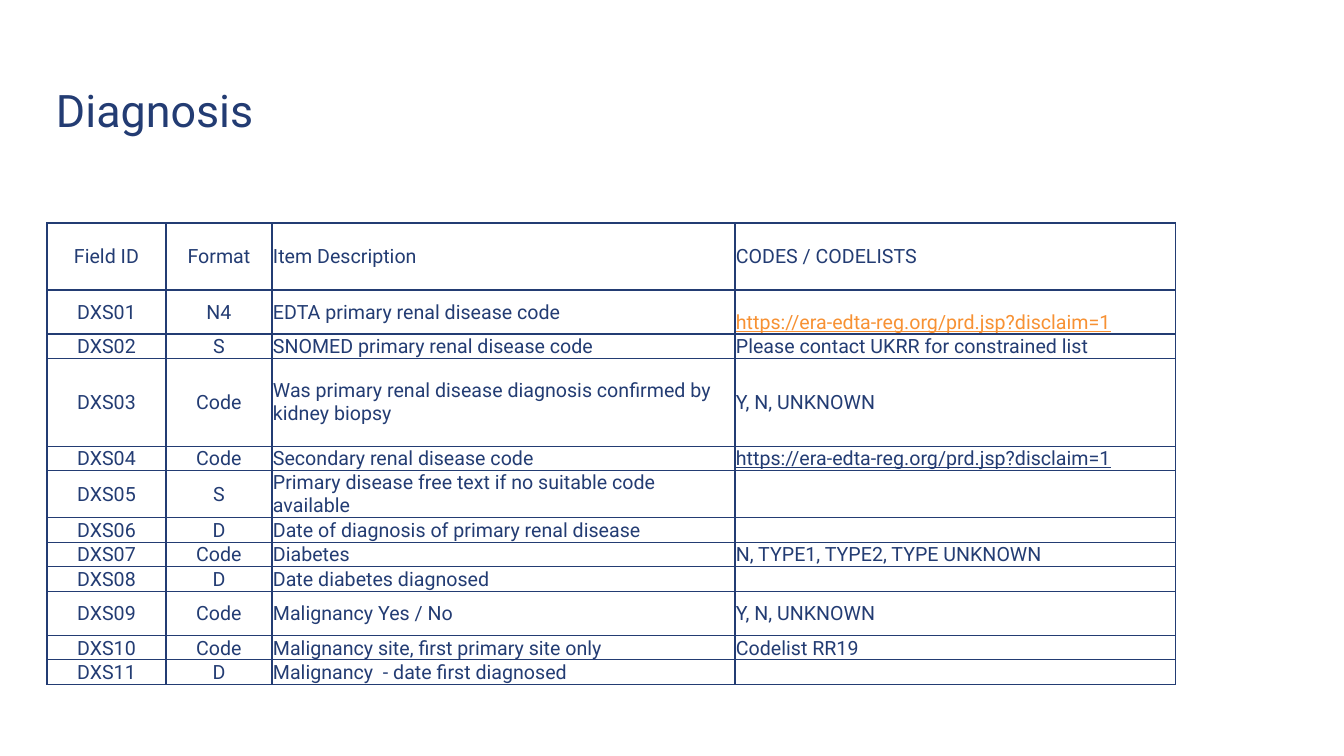
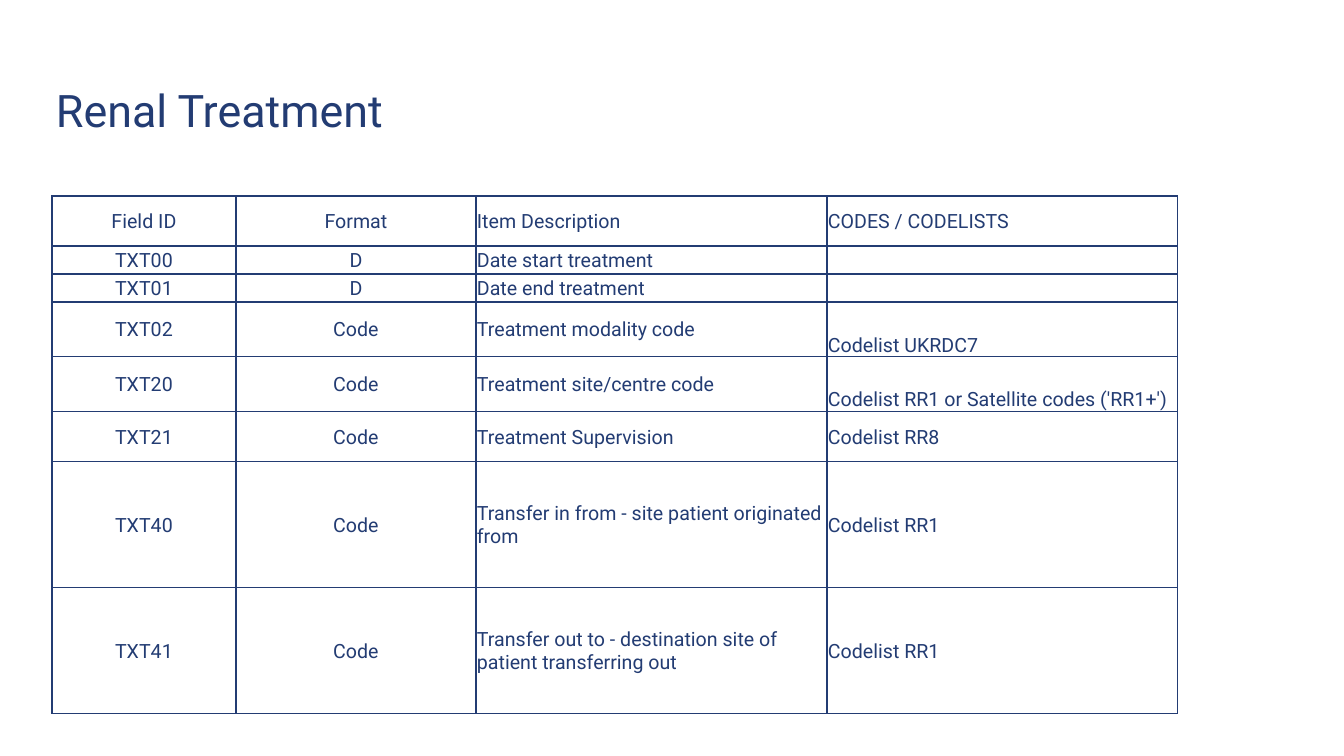
from dataclasses import dataclass

from lxml import etree
from pptx import Presentation
from pptx.dml.color import RGBColor
from pptx.enum.text import MSO_ANCHOR, PP_ALIGN
from pptx.oxml.ns import qn
from pptx.util import Emu, Pt

MIDDLE, BOTTOM = MSO_ANCHOR.MIDDLE, MSO_ANCHOR.BOTTOM
LEFT, CENTER = PP_ALIGN.LEFT, PP_ALIGN.CENTER

EMU_PER_PX = 914400 / 100.8
COLORS = {"navy": "233C73", "orange": "F79133"}
FONT = "Roboto"
TITLE_SIZE, CELL_SIZE = 32, 14
TITLE_BOX = (56, 40, 1051, 139)
BORDER_PT = 1
BORDER_TAGS = ("a:lnL", "a:lnR", "a:lnT", "a:lnB")
TITLE_ONLY = 5
COLUMN_ALIGNS = (CENTER, CENTER, LEFT, LEFT)
REGISTRY_URL = "https://era-edta-reg.org/prd.jsp?disclaim=1"


@dataclass(frozen=True)
class Field:
    height: int
    field_id: str
    format: str
    item: str
    codes: str = ""
    codes_anchor: MSO_ANCHOR = MIDDLE
    codes_color: str = "navy"
    codes_underline: bool = False


@dataclass(frozen=True)
class FieldSlide:
    title: str
    left: int
    top: int
    widths: tuple[int, ...]
    fields: tuple[Field, ...]


def header(height: int) -> Field:
    return Field(height, "Field ID", "Format", "Item Description", "CODES / CODELISTS")


SLIDES = (
    FieldSlide("Diagnosis", 47, 223, (119, 106, 463, 441), (
        header(67),
        Field(44, "DXS01", "N4", "EDTA primary renal disease code", REGISTRY_URL,
              BOTTOM, "orange", True),
        Field(24, "DXS02", "S", "SNOMED primary renal disease code",
              "Please contact UKRR for constrained list"),
        Field(88, "DXS03", "Code",
              "Was primary renal disease diagnosis confirmed by kidney biopsy",
              "Y, N, UNKNOWN"),
        Field(24, "DXS04", "Code", "Secondary renal disease code", REGISTRY_URL,
              codes_underline=True),
        Field(47, "DXS05", "S", "Primary disease free text if no suitable code available"),
        Field(24, "DXS06", "D", "Date of diagnosis of primary renal disease"),
        Field(24, "DXS07", "Code", "Diabetes", "N, TYPE1, TYPE2, TYPE UNKNOWN"),
        Field(24, "DXS08", "D", "Date diabetes diagnosed"),
        Field(44, "DXS09", "Code", "Malignancy Yes / No", "Y, N, UNKNOWN"),
        Field(24, "DXS10", "Code", "Malignancy site, first primary site only",
              "Codelist RR19", BOTTOM),
        Field(24, "DXS11", "D", "Malignancy  - date first diagnosed"),
    )),
    FieldSlide("Renal Treatment", 52, 196, (184, 240, 351, 351), (
        header(50),
        Field(28, "TXT00", "D", "Date start treatment"),
        Field(28, "TXT01", "D", "Date end treatment"),
        Field(55, "TXT02", "Code", "Treatment modality code", "Codelist UKRDC7", BOTTOM),
        Field(55, "TXT20", "Code", "Treatment site/centre code",
              "Codelist RR1 or Satellite codes ('RR1+')", BOTTOM),
        Field(50, "TXT21", "Code", "Treatment Supervision", "Codelist RR8"),
        Field(126, "TXT40", "Code", "Transfer in from - site patient originated from",
              "Codelist RR1"),
        Field(126, "TXT41", "Code",
              "Transfer out to - destination site of patient transferring out",
              "Codelist RR1"),
    )),
)


def px(value: int) -> Emu:
    return Emu(round(value * EMU_PER_PX))


def write(tf, text: str, *, size: int, color: str = "navy",
          align: PP_ALIGN = LEFT, underline: bool = False) -> None:
    p = tf.paragraphs[0]
    p.alignment = align
    if not text:
        etree.SubElement(p._p, qn("a:endParaRPr"), sz=str(size * 100))
        return
    r = p.add_run()
    r.text = text
    r.font.name = FONT
    r.font.size = Pt(size)
    r.font.underline = underline
    r.font.color.rgb = RGBColor.from_string(COLORS[color])


def set_borders(cell) -> None:
    tc_pr = cell._tc.get_or_add_tcPr()
    for tag in BORDER_TAGS:
        ln = etree.SubElement(tc_pr, qn(tag), w=str(Pt(BORDER_PT)))
        fill = etree.SubElement(ln, qn("a:solidFill"))
        etree.SubElement(fill, qn("a:srgbClr"), val=COLORS["navy"])


def add_title(slide, text: str) -> None:
    sp = slide.shapes.title
    sp.left, sp.top, sp.width, sp.height = map(px, TITLE_BOX)
    tf = sp.text_frame
    tf.margin_left = tf.margin_right = tf.margin_top = tf.margin_bottom = 0
    tf.vertical_anchor = MIDDLE
    write(tf, text, size=TITLE_SIZE)


def fill_cell(cell, text: str, align: PP_ALIGN, anchor: MSO_ANCHOR = MIDDLE,
              color: str = "navy", underline: bool = False) -> None:
    cell.margin_left = cell.margin_right = cell.margin_top = px(1)
    cell.margin_bottom = 0
    cell.vertical_anchor = anchor
    set_borders(cell)
    cell.fill.background()
    write(cell.text_frame, text, size=CELL_SIZE, color=color,
          align=align, underline=underline)


def add_field_table(slide, content: FieldSlide) -> None:
    fields = content.fields
    table = slide.shapes.add_table(
        len(fields), len(content.widths), px(content.left), px(content.top),
        px(sum(content.widths)), px(sum(f.height for f in fields))).table
    table.first_row = table.horz_banding = False
    for column, width in zip(table.columns, content.widths):
        column.width = px(width)
    for row, field in zip(table.rows, fields):
        row.height = px(field.height)
        *plain_cells, codes_cell = row.cells
        *plain_aligns, codes_align = COLUMN_ALIGNS
        texts = (field.field_id, field.format, field.item)
        for cell, text, align in zip(plain_cells, texts, plain_aligns):
            fill_cell(cell, text, align)
        fill_cell(codes_cell, field.codes, codes_align, field.codes_anchor,
                  field.codes_color, field.codes_underline)


def main() -> None:
    prs = Presentation()
    prs.slide_width, prs.slide_height = px(1344), px(756)
    for content in SLIDES:
        slide = prs.slides.add_slide(prs.slide_layouts[TITLE_ONLY])
        add_title(slide, content.title)
        add_field_table(slide, content)
    prs.save("out.pptx")


if __name__ == "__main__":
    main()
